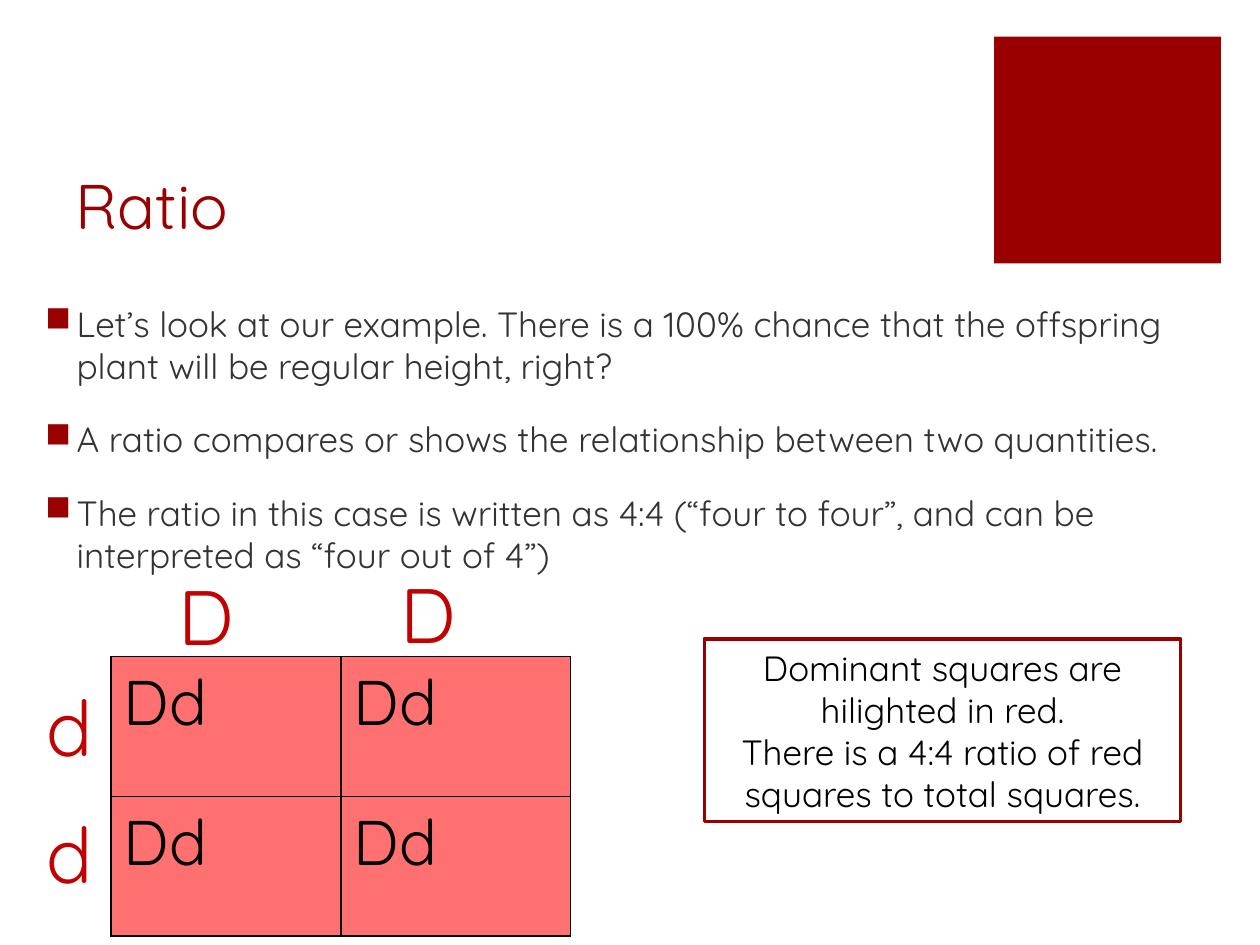
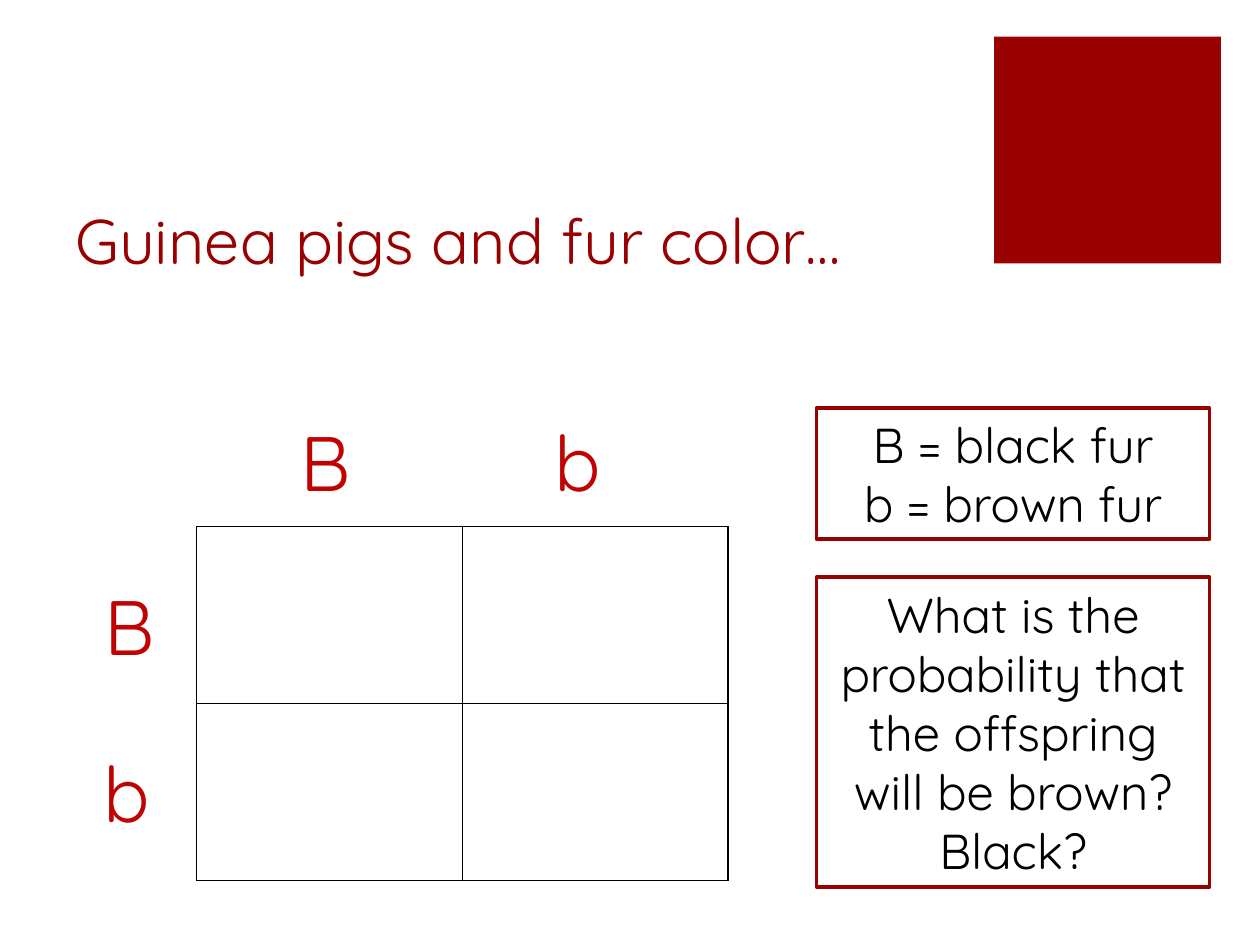
from lxml import etree
from pptx import Presentation
from pptx.dml.color import RGBColor
from pptx.enum.shapes import MSO_SHAPE
from pptx.enum.text import MSO_ANCHOR, PP_ALIGN
from pptx.oxml.ns import qn
from pptx.util import Inches, Pt

SLIDE_WIDTH, SLIDE_HEIGHT = Inches(10), Inches(7.5)
COLUMN, ROW = SLIDE_WIDTH / 100, SLIDE_HEIGHT / 75
RECTANGLE = MSO_SHAPE.RECTANGLE
TOP, MIDDLE, BOTTOM = MSO_ANCHOR.TOP, MSO_ANCHOR.MIDDLE, MSO_ANCHOR.BOTTOM
LEFT, CENTER = PP_ALIGN.LEFT, PP_ALIGN.CENTER

FONT = "Quicksand"
DARK_RED = RGBColor(0x99, 0x00, 0x00)
ALLELE_RED = RGBColor(0xC0, 0x02, 0x02)
DOMINANT_RED = RGBColor(0xFF, 0x70, 0x70)
BODY_GRAY = RGBColor(0x33, 0x33, 0x33)
BLACK = RGBColor(0x00, 0x00, 0x00)
WHITE = RGBColor(0xFF, 0xFF, 0xFF)


def grid_box(left, top, width, height):
    return (round(left * COLUMN), round(top * ROW),
            round(width * COLUMN), round(height * ROW))


def write_text(text_frame, lines, size, color, alignment=LEFT, anchor=TOP):
    text_frame.word_wrap = True
    text_frame.vertical_anchor = anchor
    text_frame.text = "\n".join(lines)
    for paragraph in text_frame.paragraphs:
        paragraph.alignment = alignment
        for run in paragraph.runs:
            run.font.name = FONT
            run.font.size = Pt(size)
            run.font.color.rgb = color


def add_text(slide, box, lines, size, color, anchor=TOP):
    text_box = slide.shapes.add_textbox(*grid_box(*box))
    write_text(text_box.text_frame, lines, size, color, anchor=anchor)
    return text_box.text_frame


def add_rectangle(slide, box, fill_color):
    shape = slide.shapes.add_shape(RECTANGLE, *grid_box(*box))
    shape.shadow.inherit = False
    shape.fill.solid()
    shape.fill.fore_color.rgb = fill_color
    shape.line.fill.background()
    return shape


def add_titled_slide(presentation, title, title_top):
    slide = presentation.slides.add_slide(presentation.slide_layouts[6])
    add_rectangle(slide, (78.9, 2.9, 18, 18), DARK_RED)
    add_text(slide, (5, title_top, 71.2, 12.5), [title], 36, DARK_RED, BOTTOM)
    return slide


def add_bullets(slide, box, lines):
    text_frame = add_text(slide, box, lines, 20, BODY_GRAY)
    for paragraph in text_frame.paragraphs:
        paragraph.space_before = Pt(18)
        properties = paragraph._p.get_or_add_pPr()
        properties.set("marL", str(Inches(0.25)))
        properties.set("indent", str(-Inches(0.25)))
        bullet_color = etree.SubElement(properties, qn("a:buClr"))
        etree.SubElement(bullet_color, qn("a:srgbClr"), val=str(DARK_RED))
        etree.SubElement(properties, qn("a:buChar"), char="■")


def add_callout(slide, box, lines, size):
    callout = add_rectangle(slide, box, WHITE)
    callout.line.color.rgb = DARK_RED
    callout.line.width = Pt(2)
    write_text(callout.text_frame, lines, size, BLACK, CENTER, MIDDLE)


def outline_cell(cell):
    properties = cell._tc.get_or_add_tcPr()
    for side in ("a:lnL", "a:lnR", "a:lnT", "a:lnB"):
        border = etree.SubElement(properties, qn(side), w=str(Pt(1)))
        fill = etree.SubElement(border, qn("a:solidFill"))
        etree.SubElement(fill, qn("a:srgbClr"), val=str(BLACK))


def add_punnett_square(slide, box, genotype="", fill_color=None):
    table = slide.shapes.add_table(2, 2, *grid_box(*box)).table
    table.first_row = False
    table.horz_banding = False
    for cell in table.iter_cells():
        outline_cell(cell)
        if fill_color is None:
            cell.fill.background()
        else:
            cell.fill.solid()
            cell.fill.fore_color.rgb = fill_color
        if genotype:
            write_text(cell.text_frame, [genotype], 36, BLACK)


def add_alleles(slide, alleles):
    for letter, left, top in alleles:
        add_text(slide, (left, top, 7.1, 8.4), [letter], 44, ALLELE_RED)


def add_ratio_slide(presentation):
    slide = add_titled_slide(presentation, "Ratio", 7.2)
    add_bullets(slide, (2.6, 23.5, 96.2, 49.3), [
        "Let’s look at our example. There is a 100% chance that the offspring "
        "plant will be regular height, right?",
        "A ratio compares or shows the relationship between two quantities.",
        "The ratio in this case is written as 4:4 (“four to four”, and can be "
        "interpreted as “four out of 4”)",
    ])
    add_punnett_square(slide, (8.8, 52.1, 36.5, 22.2), "Dd", DOMINANT_RED)
    add_alleles(slide, [("D", 13.2, 44.6), ("D", 30.8, 44.5),
                        ("d", 2.7, 53.4), ("d", 2.7, 63.5)])
    add_callout(slide, (55.9, 50.7, 37.8, 14.5), [
        "Dominant squares are hilighted in red.",
        "There is a 4:4 ratio of red squares to total squares.",
    ], 20)


def add_guinea_pig_slide(presentation):
    slide = add_titled_slide(presentation, "Guinea pigs and fur color…", 10)
    add_punnett_square(slide, (15.6, 41.8, 42.2, 28.1))
    add_alleles(slide, [("B", 22.9, 32.4), ("b", 43, 32.4),
                        ("B", 7.3, 45.4), ("b", 7.2, 58.7)])
    add_callout(slide, (64.8, 32.4, 31.2, 10.4),
                ["B = black fur", "b = brown fur"], 28)
    add_callout(slide, (64.8, 45.8, 31.2, 24.6), [
        "What is the probability that the offspring will be brown? Black?",
    ], 28)


def main():
    presentation = Presentation()
    presentation.slide_width = SLIDE_WIDTH
    presentation.slide_height = SLIDE_HEIGHT
    add_ratio_slide(presentation)
    add_guinea_pig_slide(presentation)
    presentation.save("out.pptx")


if __name__ == "__main__":
    main()
